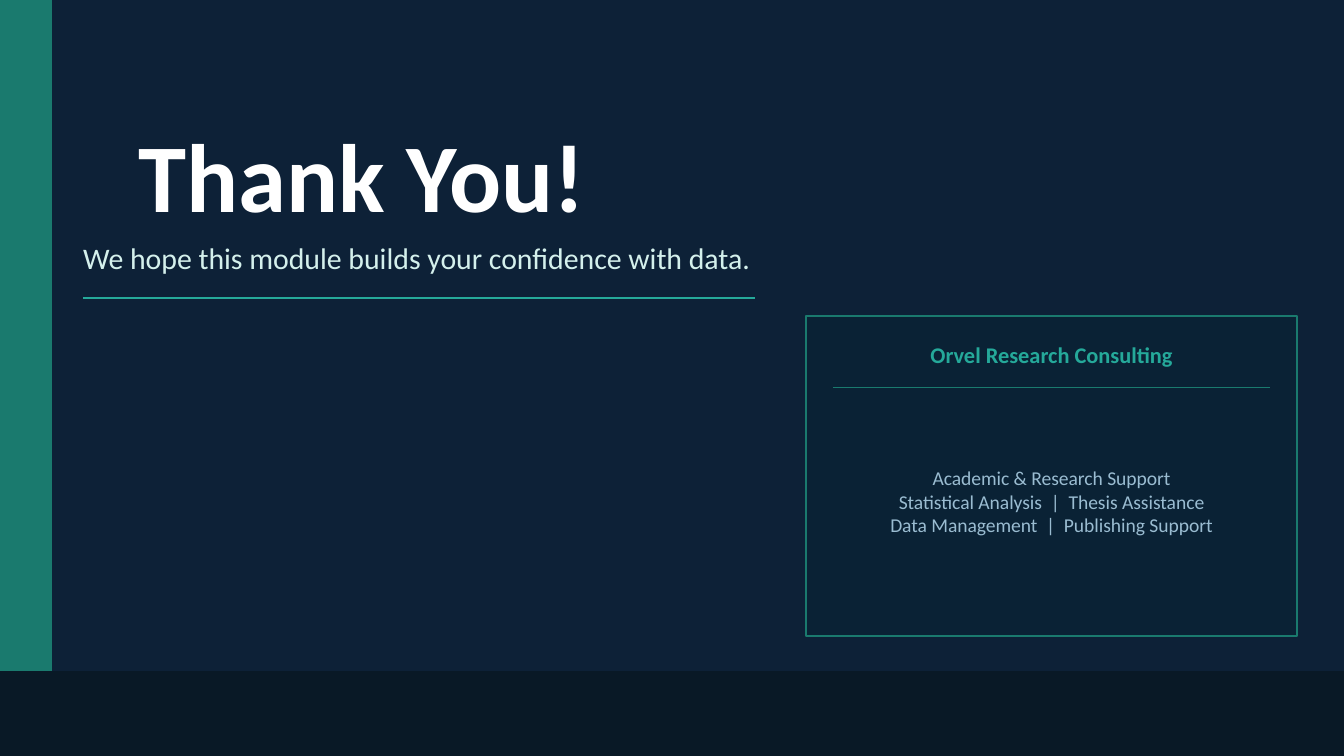
from dataclasses import dataclass

from pptx import Presentation
from pptx.dml.color import RGBColor
from pptx.enum.shapes import MSO_CONNECTOR as Connector, MSO_SHAPE as Shape
from pptx.enum.text import MSO_ANCHOR as Anchor, MSO_AUTO_SIZE as AutoSize, PP_ALIGN as Align
from pptx.oxml.ns import qn
from pptx.slide import Slide
from pptx.util import Pt


def color(value):
    return RGBColor.from_string(value)


def write_text(shape, text, *, font, size, fill, bold=False, align=Align.LEFT):
    frame = shape.text_frame
    frame.word_wrap = True
    frame.auto_size = AutoSize.NONE
    frame.vertical_anchor = Anchor.MIDDLE
    frame.margin_left = frame.margin_right = 0
    frame.margin_top = frame.margin_bottom = 0
    frame.text = text
    for paragraph in frame.paragraphs:
        paragraph.alignment = align
        paragraph.font.name = font
        paragraph.font.size = Pt(size)
        paragraph.font.bold = bold
        paragraph.font.color.rgb = color(fill)


@dataclass
class ClosingSlide:
    slide: Slide
    font: str = "Calibri"
    background: str = "0D2137"
    teal: str = "1A7A6E"
    accent: str = "25A99A"
    footer: str = "091926"
    card: str = "0A2235"
    white: str = "FFFFFF"
    mint: str = "D4F0EC"
    muted: str = "9ABCD1"

    def paint_background(self):
        fill = self.slide.background.fill
        fill.solid()
        fill.fore_color.rgb = color(self.background)

    def title(self, text, left, top, width, height, **style):
        shape = self.slide.shapes.title
        shape.left, shape.top = Pt(left), Pt(top)
        shape.width, shape.height = Pt(width), Pt(height)
        write_text(shape, text, font=self.font, **style)

    def text(self, text, left, top, width, height, **style):
        shape = self.slide.shapes.add_textbox(Pt(left), Pt(top), Pt(width), Pt(height))
        write_text(shape, text, font=self.font, **style)

    def panel(self, left, top, width, height, fill, outline):
        shape = self.slide.shapes.add_shape(
            Shape.RECTANGLE, Pt(left), Pt(top), Pt(width), Pt(height))
        shape.shadow.inherit = False
        shape.fill.solid()
        shape.fill.fore_color.rgb = color(fill)
        shape.line.color.rgb = color(outline)
        shape.line.width = Pt(1)

    def rule(self, left, top, width, stroke, weight):
        line = self.slide.shapes.add_connector(
            Connector.STRAIGHT, Pt(left), Pt(top), Pt(left + width), Pt(top))
        line.line.color.rgb = color(stroke)
        line.line.width = Pt(weight)
        properties = line._element.spPr
        properties.append(properties.makeelement(qn("a:effectLst"), {}))


def main():
    presentation = Presentation()
    presentation.slide_width, presentation.slide_height = Pt(720), Pt(405)
    closing = ClosingSlide(presentation.slides.add_slide(presentation.slide_layouts[5]))

    closing.paint_background()
    closing.panel(0, 0, 27.4, 405, closing.teal, closing.teal)
    closing.panel(0, 360, 720, 45, closing.footer, closing.footer)

    closing.title("Thank You!", 74.2, 64, 372, 57.6, size=52, fill=closing.white, bold=True)
    closing.text("We hope this module builds your confidence with data.",
                 44.6, 123.8, 561.6, 28.8, size=16, fill=closing.mint)
    closing.rule(44.6, 159.8, 360, closing.accent, 1)

    closing.panel(432, 169.2, 262.8, 171.4, closing.card, closing.teal)
    closing.text("Orvel Research Consulting", 439.2, 177.1, 248.4, 25.9,
                 size=12, fill=closing.accent, bold=True, align=Align.CENTER)
    closing.rule(446.4, 207.4, 234, closing.teal, 0.5)
    services = [
        "Academic & Research Support",
        "Statistical Analysis  |  Thesis Assistance",
        "Data Management  |  Publishing Support",
    ]
    closing.text("\n".join(services), 439.2, 213.1, 248.4, 110.9,
                 size=10.5, fill=closing.muted, align=Align.CENTER)

    presentation.save("out.pptx")


if __name__ == "__main__":
    main()
